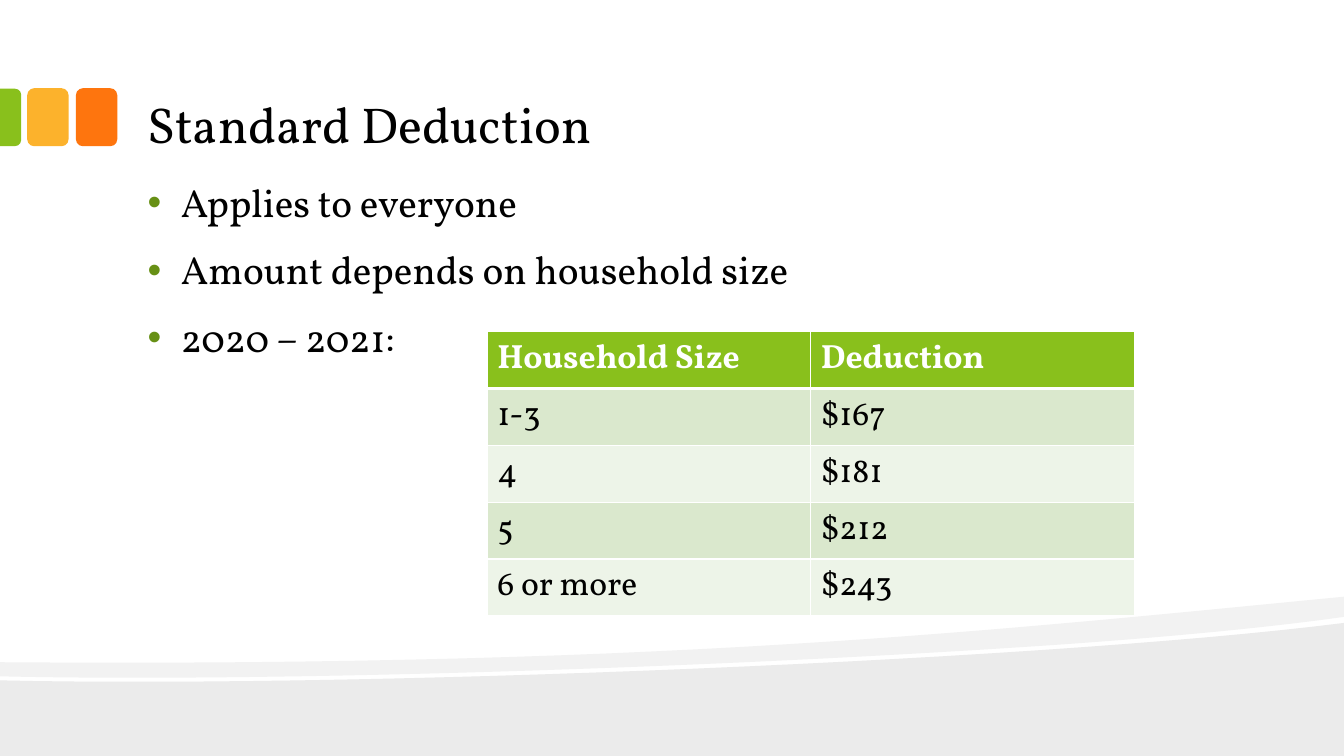
from lxml.etree import SubElement as Sub
from pptx import Presentation
from pptx.dml.color import RGBColor as RGB
from pptx.enum.shapes import MSO_SHAPE as Kind
from pptx.enum.text import MSO_ANCHOR as Anchor, MSO_AUTO_SIZE as Fit, PP_ALIGN as Align
from pptx.oxml.ns import qn
from pptx.util import Inches, Pt

HUES = {"ink": "000000", "white": "FFFFFF", "green": "89C01C", "gold": "FCB22C",
        "orange": "FE750E", "dot": "679015", "sage": "DAE8CD", "mist": "EDF4E8",
        "grey": "EBEBEB", "pale": "F2F2F2"}
TONE = {name: RGB.from_string(code) for name, code in HUES.items()}

deck = Presentation()
deck.slide_width, deck.slide_height = Inches(13.33), Inches(7.5)
# Grid of 40 columns and 30 rows
COL, ROW = deck.slide_width / 40, deck.slide_height / 30
slide = deck.slides.add_slide(deck.slide_layouts[1])
shapes = slide.shapes


def grid(*nums):
    """Turn column, row, column, row ... into lengths."""
    return [round(n * (ROW if i % 2 else COL)) for i, n in enumerate(nums)]


def write(para, text, size=24, tone="ink", bold=False):
    para.alignment = Align.LEFT
    run = para.add_run()
    run.text = text
    font = run.font
    font.name, font.size, font.bold = "Vollkorn", Pt(size), bold
    font.color.rgb = TONE[tone]


# Waves at the foot: a step is one point (line) or three points (curve)
waves = [
    ("grey", (40, 24.72), [
        [(40, 30)], [(0, 30)], [(0, 27)],
        [(10.56, 27.32), (31.27, 26.2), (40, 24.72)]]),
    ("pale", (40, 23.68), [
        [(40, 24.48)],
        [(37.66, 24.92), (34.48, 25.32), (30.88, 25.64)],
        [(20.95, 26.52), (7.74, 27.08), (0, 26.84)],
        [(0, 26.28)],
        [(19.57, 26.48), (29.14, 25.08), (40, 23.68)]]),
]
plain = []
for tone, start, steps in waves:
    dots = [start]
    for step in steps:
        if len(step) == 1:
            dots += step
            continue
        ends = [dots[-1], *step]
        for n in range(1, 31):
            t = n / 30
            mix = ((1 - t) ** 3, 3 * t * (1 - t) ** 2, 3 * t * t * (1 - t), t ** 3)
            dots.append(tuple(sum(m * p[k] for m, p in zip(mix, ends)) for k in (0, 1)))
    pen = shapes.build_freeform(*grid(*start))
    pen.add_line_segments([grid(*dot) for dot in dots[1:]], close=True)
    plain.append((pen.convert_to_shape(), tone))

# Colour tabs beside the title
for left, tone in ((2.26, "orange"), (0.81, "gold")):
    tab = shapes.add_shape(Kind.ROUNDED_RECTANGLE, *grid(left, 3.5, 1.23, 2.3))
    plain.append((tab, tone))
edge = shapes.add_shape(Kind.ROUND_2_SAME_RECTANGLE, *grid(-0.54, 4.24, 1.71, 0.84))
edge.rotation = 90
edge.adjustments[0] = 0.292
plain.append((edge, "green"))
for shape, tone in plain:
    shape.shadow.inherit = False
    shape.fill.solid()
    shape.fill.fore_color.rgb = TONE[tone]
    shape.line.fill.background()

# Title and body places
title, body = shapes.title, slide.placeholders[1]
for hold, top, high, anchor in ((title, 0.68, 5.68, Anchor.BOTTOM), (body, 7, 20, Anchor.TOP)):
    hold.left, hold.top, hold.width, hold.height = grid(4, top, 32, high)
    frame = hold.text_frame
    frame.auto_size, frame.word_wrap = Fit.NONE, True
    frame.vertical_anchor = anchor
    frame.margin_left = frame.margin_right = Inches(0.13)
    frame.margin_top = frame.margin_bottom = Inches(0.07)
write(title.text_frame.paragraphs[0], "Standard Deduction", size=36)

# Bullet list
points = ["Applies to everyone", "Amount depends on household size", "2020 – 2021:"]
for i, text in enumerate(points):
    para = body.text_frame.add_paragraph() if i else body.text_frame.paragraphs[0]
    write(para, text, size=28)
    para.line_spacing, para.space_before = 0.9, Pt(18)
    props = para._p.get_or_add_pPr()
    props.set("marL", str(Inches(0.33)))
    props.set("indent", str(-Inches(0.33)))
    Sub(Sub(props, qn("a:buClr")), qn("a:srgbClr"), val=HUES["dot"])
    Sub(props, qn("a:buFont"), typeface="Arial")
    Sub(props, qn("a:buChar"), char="•")

# Deduction table
rows = [("Household Size", "Deduction"), ("1-3", "$167"), ("4", "$181"),
        ("5", "$212"), ("6 or more", "$243")]
table = shapes.add_table(len(rows), 2, *grid(14.5, 13.16, 19.26, 10)).table
for r, row in enumerate(rows):
    head = r == 0
    fill = "green" if head else "sage" if r % 2 else "mist"
    thick = {"lnT": 3 if r == 1 else 1, "lnB": 3 if head else 1}
    for c, text in enumerate(row):
        cell = table.cell(r, c)
        write(cell.text_frame.paragraphs[0], text, tone="white" if head else "ink", bold=head)
        props = cell._tc.get_or_add_tcPr()
        for side in ("lnL", "lnR", "lnT", "lnB"):
            line = Sub(props, qn("a:" + side), w=str(Pt(thick.get(side, 1))))
            Sub(Sub(line, qn("a:solidFill")), qn("a:srgbClr"), val=HUES["white"])
        cell.fill.solid()
        cell.fill.fore_color.rgb = TONE[fill]

deck.save("out.pptx")
